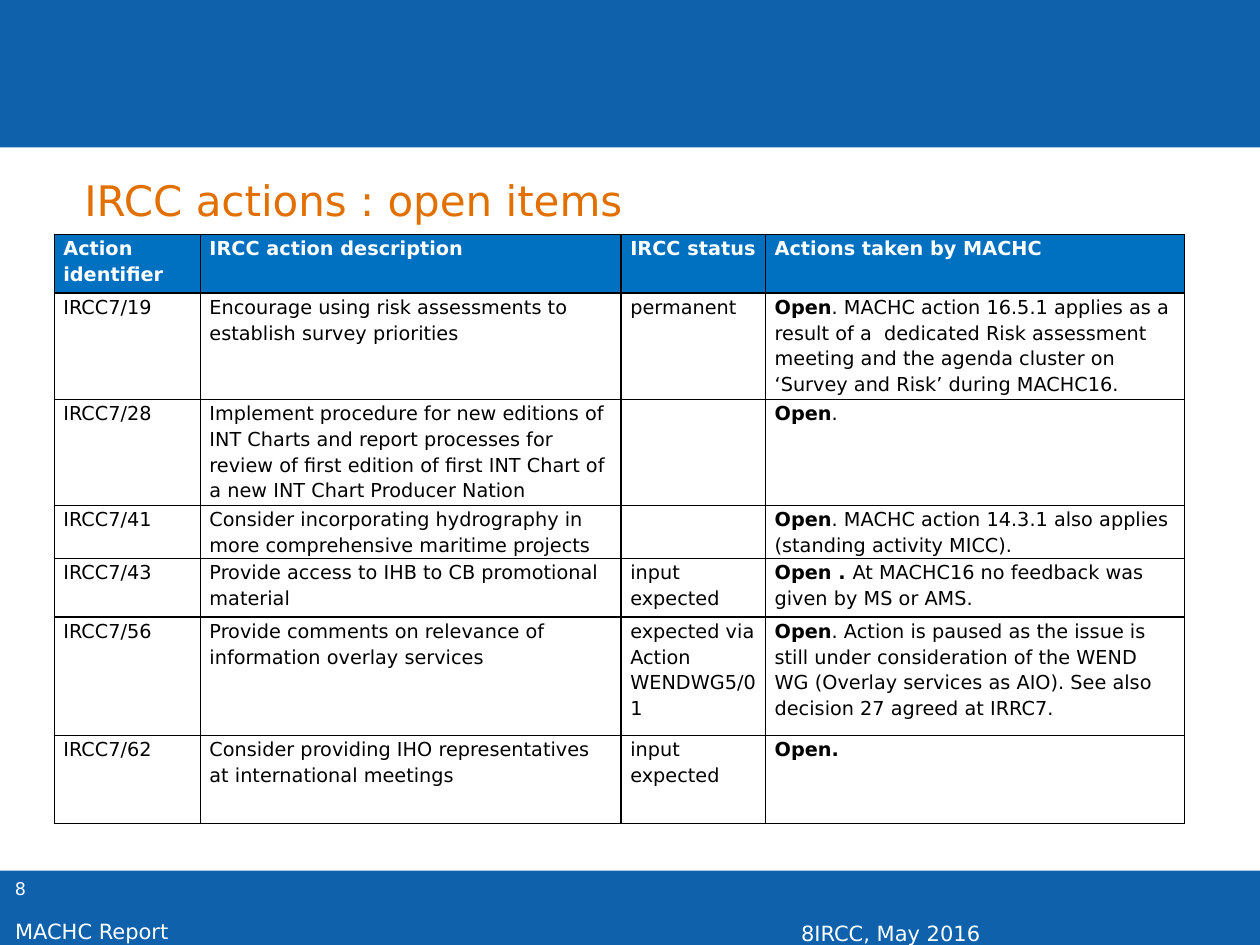
from lxml.etree import SubElement
from pptx import Presentation
from pptx.dml.color import RGBColor
from pptx.enum.shapes import MSO_SHAPE
from pptx.enum.text import MSO_ANCHOR, PP_ALIGN
from pptx.oxml.ns import qn
from pptx.util import Pt

FONT = "DejaVu Sans"
BLUE, HEADER_BLUE, ORANGE = "0E61AA", "0070C0", "E17000"
WHITE, BLACK = "FFFFFF", "000000"

COLUMN_WIDTHS = [83.5, 240.5, 82.5, 239.5]
ROW_HEIGHTS = [33.5, 57, 57, 28, 33.5, 67.5, 50.5]
HEADERS = ["Action identifier", "IRCC action description", "IRCC status",
           "Actions taken by MACHC"]
# Identifier, description, status, bold lead of the action taken, rest of it
ACTIONS = [
    ("IRCC7/19", "Encourage using risk assessments to establish survey priorities",
     "permanent", "Open",
     ". MACHC action 16.5.1 applies as a result of a  dedicated Risk assessment "
     "meeting and the agenda cluster on ‘Survey and Risk’ during MACHC16."),
    ("IRCC7/28", "Implement procedure for new editions of INT Charts and report "
     "processes for review of first edition of first INT Chart of a new INT Chart "
     "Producer Nation", "", "Open", "."),
    ("IRCC7/41", "Consider incorporating hydrography in more comprehensive "
     "maritime projects", "", "Open",
     ". MACHC action 14.3.1 also applies (standing activity MICC)."),
    ("IRCC7/43", "Provide access to IHB to CB promotional material",
     "input expected", "Open . ", "At MACHC16 no feedback was given by MS or AMS."),
    ("IRCC7/56", "Provide comments on relevance of information overlay services",
     "expected via Action WENDWG5/01", "Open",
     ". Action is paused as the issue is still under consideration of the WEND WG "
     "(Overlay services as AIO). See also decision 27 agreed at IRRC7."),
    ("IRCC7/62", "Consider providing IHO representatives at international meetings",
     "input expected", "Open.", ""),
]


def rgb(value):
    return RGBColor.from_string(value)


def write(p, text, size=11, color=BLACK, bold=False):
    """Append a formatted run to a paragraph."""
    r = p.add_run()
    r.text = text
    r.font.name, r.font.size, r.font.bold = FONT, Pt(size), bold
    r.font.color.rgb = rgb(color)


def add_band(s, left, top, width, height):
    sp = s.shapes.add_shape(MSO_SHAPE.RECTANGLE, Pt(left), Pt(top), Pt(width), Pt(height))
    sp.shadow.inherit = False
    sp.fill.solid()
    sp.fill.fore_color.rgb = rgb(BLUE)
    sp.line.fill.background()


def add_label(s, text, left, top, width, height, **fmt):
    tf = s.shapes.add_textbox(Pt(left), Pt(top), Pt(width), Pt(height)).text_frame
    tf.word_wrap = True
    write(tf.paragraphs[0], text, color=WHITE, **fmt)


def add_footer(s, left, top, width, height):
    add_band(s, left, top, width, height)
    add_label(s, "8", left + 1.5, top + 0.7, 56, 29, size=10)
    add_label(s, "8IRCC, May 2016", left + 450.7, top + 25.2, 269, 17, size=12)
    add_label(s, "MACHC Report", left + 1.5, top + 23.8, 315, 17, size=12)


def set_title(s, text, left, top, width, height):
    sp = s.shapes.title
    sp.left, sp.top, sp.width, sp.height = Pt(left), Pt(top), Pt(width), Pt(height)
    tf = sp.text_frame
    tf.margin_left = tf.margin_right = tf.margin_top = tf.margin_bottom = 0
    tf.vertical_anchor = MSO_ANCHOR.MIDDLE
    p = tf.paragraphs[0]
    p.alignment = PP_ALIGN.LEFT
    write(p, text, size=24, color=ORANGE)


def add_borders(cell, color=BLACK, width=1):
    tc_pr = cell._tc.get_or_add_tcPr()
    for side in ("a:lnL", "a:lnR", "a:lnT", "a:lnB"):
        ln = SubElement(tc_pr, qn(side), w=str(Pt(width)))
        fill = SubElement(ln, qn("a:solidFill"))
        SubElement(fill, qn("a:srgbClr"), val=color)


def format_cell(cell, fill=None):
    """Set borders, fill and margins, and return the cell's paragraph."""
    add_borders(cell)
    if fill:
        cell.fill.solid()
        cell.fill.fore_color.rgb = rgb(fill)
    else:
        cell.fill.background()
    cell.margin_left = cell.margin_right = Pt(5.2)
    cell.margin_top = cell.margin_bottom = 0
    p = cell.text_frame.paragraphs[0]
    p.line_spacing = 1.15
    p.font.size = Pt(11)
    return p


def add_action_table(s, left, top):
    shape = s.shapes.add_table(len(ROW_HEIGHTS), len(COLUMN_WIDTHS), Pt(left), Pt(top),
                               Pt(sum(COLUMN_WIDTHS)), Pt(sum(ROW_HEIGHTS)))
    table = shape.table
    table.first_row = table.horz_banding = False
    for column, width in zip(table.columns, COLUMN_WIDTHS):
        column.width = Pt(width)
    for row, height in zip(table.rows, ROW_HEIGHTS):
        row.height = Pt(height)
    for col, text in enumerate(HEADERS):
        write(format_cell(table.cell(0, col), HEADER_BLUE), text, color=WHITE, bold=True)
    for row, (*texts, lead, rest) in enumerate(ACTIONS, 1):
        for col, text in enumerate(texts):
            p = format_cell(table.cell(row, col))
            if text:
                write(p, text)
        p = format_cell(table.cell(row, len(texts)))
        p.space_after = Pt(2)
        write(p, lead, bold=True)
        if rest:
            write(p, rest)


def main():
    prs = Presentation()
    prs.slide_width, prs.slide_height = Pt(720), Pt(540)
    s = prs.slides.add_slide(prs.slide_layouts[5])
    add_band(s, 0, 0, 720, 84.3)
    add_footer(s, 0, 497.5, 720, 42.5)
    set_title(s, "IRCC actions : open items", 48.2, 99.4, 612, 29)
    add_action_table(s, 31, 134)
    prs.save("out.pptx")


if __name__ == "__main__":
    main()
